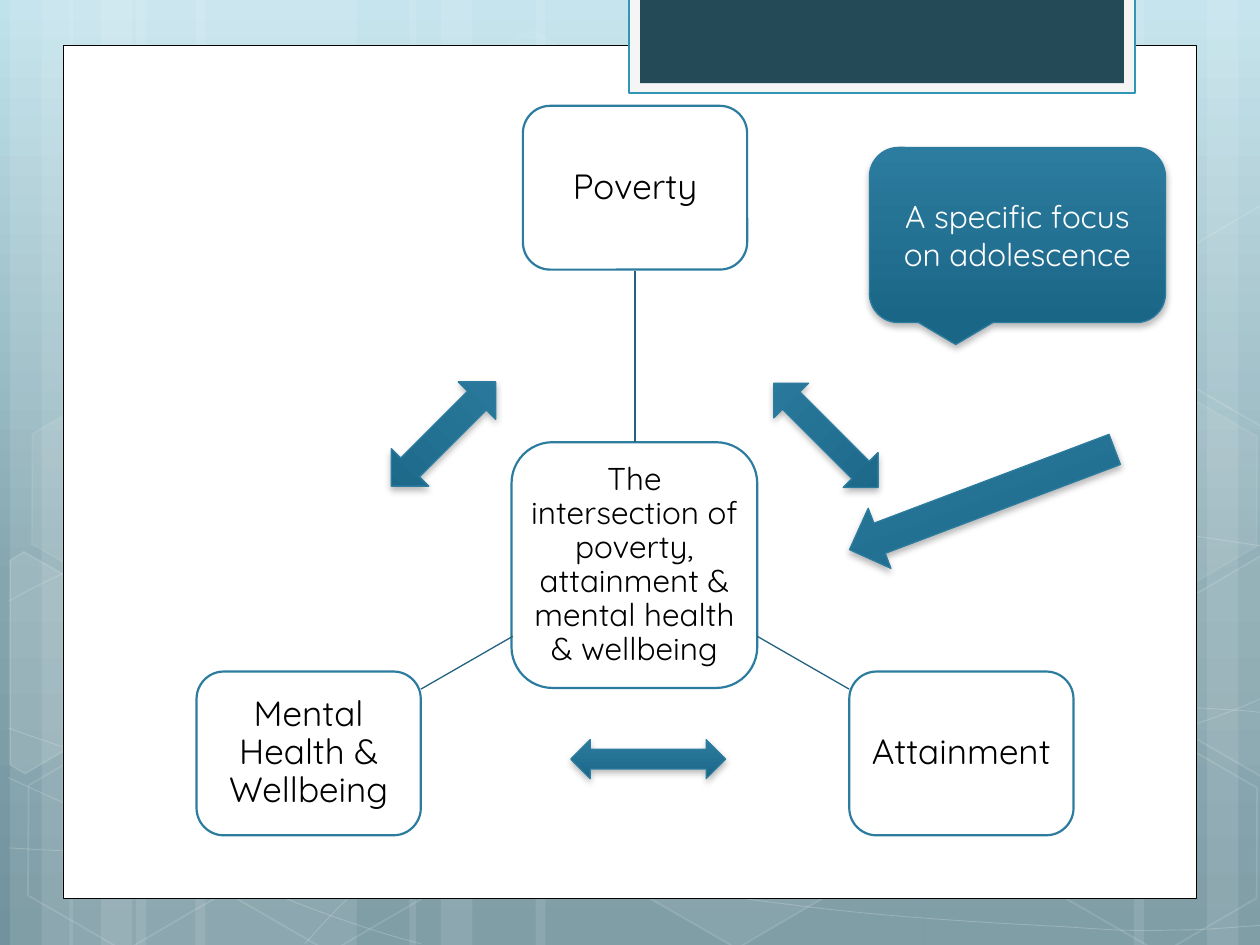
import pptx
import pptx.dml.color
import pptx.enum.shapes
import pptx.enum.text
import pptx.oxml.ns
import pptx.util
from lxml import etree

Inches = pptx.util.Inches
Pt = pptx.util.Pt
Kind = pptx.enum.shapes.MSO_SHAPE
qn = pptx.oxml.ns.qn

FONT = "Quicksand"
BLUE = "2C7C9F"
SPOKE = "23637F"
WHITE = "FFFFFF"
BLACK = "000000"

# left, width of the pale vertical bars
BARS = [(1.08, 1.75), (0.08, 0.5), (0.33, 0.83), (1.55, 1.75), (0.55, 0.5), (0.8, 0.83),
        (7.33, 1.75), (9.58, 0.5), (9, 0.83), (4.25, 3.08), (3.25, 0.5), (3.5, 0.83)]

# Each wave is a start point followed by cubic segments: two controls and an end
WAVES = [
    [(0.07, 6.73), (0.61, 6.76), (1.15, 6.79), (1.9, 6.78), (2.65, 6.77), (3.58, 6.75),
     (4.58, 6.65), (5.58, 6.55), (7, 6.36), (7.92, 6.17), (8.83, 5.98), (9.77, 5.68),
     (10.07, 5.51)],
    [(0.07, 4.77), (0.36, 4.61), (0.65, 4.46), (1.21, 4.31), (1.78, 4.16), (2.59, 3.94),
     (3.47, 3.87), (4.36, 3.8), (5.44, 3.79), (6.54, 3.87), (7.64, 3.95), (9.47, 4.26),
     (10.07, 4.34)],
    [(0.06, 6.17), (1.27, 6.72), (2.47, 7.27), (3.34, 7.49)],
    [(0.07, 5.78), (0.38, 5.89), (0.7, 6), (1.28, 6.16), (1.86, 6.31), (2.73, 6.56),
     (3.57, 6.73), (4.4, 6.9), (5.45, 7.08), (6.28, 7.18), (7.11, 7.29), (8, 7.33),
     (8.53, 7.36), (9.05, 7.4), (9.19, 7.38), (9.45, 7.38), (9.71, 7.37), (9.89, 7.35),
     (10.07, 7.34)],
    [(2.42, 7.49), (2.6, 7.29), (2.78, 7.09), (3.02, 6.91), (3.26, 6.73), (3.6, 6.53),
     (3.88, 6.39), (4.16, 6.25), (4.33, 6.19), (4.7, 6.09), (5.06, 5.99), (5.73, 5.85),
     (6.08, 5.78), (6.44, 5.71), (6.49, 5.71), (6.8, 5.69), (7.11, 5.66), (7.6, 5.63),
     (7.94, 5.62), (8.29, 5.61), (8.86, 5.62), (8.86, 5.62), (9.08, 5.62), (9.31, 5.62),
     (9.53, 5.62), (9.71, 5.63), (9.88, 5.64), (9.97, 5.65), (10.06, 5.66), (10.03, 5.65),
     (10.06, 5.66)],
]

# left, top, fill opacity, line opacity
HEXAGONS = [(3.34, 0.36, 4, 8), (4.97, 5.89, 6, 12), (0.11, 5.91, 0, 12), (0.14, 3.12, 7, 8),
            (1.74, 5.92, 0, 12), (7.53, 4.53, 10, 12), (8.34, 5.93, 0, 12), (8.34, 3.14, 7, 8)]

# fill opacity, corners of the hexagons cut by the slide's edge
CUT_HEXAGONS = [
    (10, [(0.08, 4.45), (0.19, 4.38), (0.96, 4.82), (0.95, 5.7), (0.2, 6.14), (0.08, 6.07)]),
    (4, [(9.26, 4.85), (10.01, 4.41), (10.09, 4.46), (10.09, 6.13), (10.02, 6.17), (9.26, 5.73)]),
    (0, [(9.26, 2.07), (10.01, 1.63), (10.1, 1.68), (10.09, 3.35), (10.02, 3.39), (9.26, 2.95)]),
]


def rgb(value):
    return pptx.dml.color.RGBColor.from_string(value)


def paint(fill, holder, color, opacity=100):
    """Fill solidly; holder is the XML element that contains the fill."""
    if not color or not opacity:
        fill.background()
        return
    fill.solid()
    fill.fore_color.rgb = rgb(color)
    if opacity < 100:
        tint = holder.find(qn("a:solidFill")).find(qn("a:srgbClr"))
        etree.SubElement(tint, qn("a:alpha"), val=str(opacity * 1000))


def paint_gradient(fill, root, stops):
    """Fill from top to bottom with (percent, color) stops."""
    fill.gradient()
    fill.gradient_angle = 270
    stop_list = next(root.iter(qn("a:gsLst")))
    for stop in list(stop_list):
        stop_list.remove(stop)
    for percent, color in stops:
        stop = etree.SubElement(stop_list, qn("a:gs"), pos=str(percent * 1000))
        etree.SubElement(stop, qn("a:srgbClr"), val=color)


def outline(shape, color, width, opacity=100):
    shape.line.width = Pt(width)
    paint(shape.line.fill, shape.element.spPr.find(qn("a:ln")), color, opacity)


def add_shape(page, kind, left, top, width, height, color=None, opacity=100, rotation=0):
    shape = page.shapes.add_shape(kind, Inches(left), Inches(top), Inches(width), Inches(height))
    shape.shadow.inherit = False
    shape.rotation = rotation
    paint(shape.fill, shape.element.spPr, color, opacity)
    shape.line.fill.background()
    return shape


def add_outline(page, points, close, opacity=0):
    corners = [(Inches(x), Inches(y)) for x, y in points]
    builder = page.shapes.build_freeform(*corners[0])
    builder.add_line_segments(corners[1:], close=close)
    shape = builder.convert_to_shape()
    shape.shadow.inherit = False
    paint(shape.fill, shape.element.spPr, WHITE, opacity)
    return shape


def add_wave(page, points):
    """Draw an open outline, each three of its segments joined into one cubic curve."""
    wave = add_outline(page, points, False)
    segments = list(wave.element.iter(qn("a:lnTo")))
    track = segments[0].getparent()
    for first in range(0, len(segments), 3):
        curve = etree.SubElement(track, qn("a:cubicBezTo"))
        for segment in segments[first:first + 3]:
            curve.append(segment[0])
            track.remove(segment)
    outline(wave, WHITE, 0.5, 20)


def write_text(shape, text, size, color):
    frame = shape.text_frame
    frame.word_wrap = True
    frame.vertical_anchor = pptx.enum.text.MSO_ANCHOR.MIDDLE
    para = frame.paragraphs[0]
    para.text = text
    para.alignment = pptx.enum.text.PP_ALIGN.CENTER
    para.font.size = Pt(size)
    para.font.name = FONT
    para.font.color.rgb = rgb(color)
    return frame


def add_node(page, left, top, width, height, text, size, inset):
    node = add_shape(page, Kind.ROUNDED_RECTANGLE, left, top, width, height, WHITE)
    outline(node, BLUE, 1.25)
    frame = write_text(node, text, size, BLACK)
    frame.paragraphs[0].line_spacing = 0.9
    frame.margin_left = frame.margin_right = Inches(inset)
    frame.margin_top = frame.margin_bottom = Inches(inset)


def add_spoke(page, start, end):
    spoke = page.shapes.add_connector(pptx.enum.shapes.MSO_CONNECTOR.STRAIGHT,
                                      *map(Inches, start + end))
    spoke.line.color.rgb = rgb(SPOKE)
    spoke.line.width = Pt(0.75)
    etree.SubElement(spoke.element.spPr, qn("a:effectLst"))


def add_glossy(page, kind, left, top, width, height, rotation=0):
    """Add a blue gradient shape with a soft shadow below it."""
    shape = add_shape(page, kind, left, top, width, height, rotation=rotation)
    paint_gradient(shape.fill, shape.element, [(0, BLUE), (100, "1A6687")])
    outline(shape, BLUE, 0.75)
    shadow = etree.SubElement(shape.element.spPr.find(qn("a:effectLst")), qn("a:outerShdw"),
                              blurRad=str(Pt(4)), dist=str(Pt(2)), dir="5400000", rotWithShape="0")
    tint = etree.SubElement(shadow, qn("a:srgbClr"), val=BLACK)
    etree.SubElement(tint, qn("a:alpha"), val="28000")
    return shape


def add_backdrop(page):
    paint_gradient(page.background.fill, page.element,
                   [(0, "C0E2EB"), (62, "85A6AF"), (100, "72939D")])
    for left, width in BARS:
        add_shape(page, Kind.RECTANGLE, left, 0, width, 7.5, WHITE, 10)
    for points in WAVES:
        add_wave(page, points)
    for left, top, opacity, line_opacity in HEXAGONS:
        hexagon = add_shape(page, Kind.HEXAGON, left, top, 1.75, 1.52, WHITE, opacity, 30)
        hexagon.adjustments[0] = 0.285
        outline(hexagon, WHITE, 1, line_opacity)
    for opacity, corners in CUT_HEXAGONS:
        outline(add_outline(page, corners, True, opacity), WHITE, 1, 12)


def add_panel(page):
    outline(add_shape(page, Kind.RECTANGLE, 0.5, 0.36, 9, 6.77, WHITE), BLACK, 0.5)
    outline(add_shape(page, Kind.RECTANGLE, 4.99, -0.02, 4.02, 0.76, "F5F5F5"), "2F97B5", 1.25)
    add_shape(page, Kind.RECTANGLE, 5.08, -0.02, 3.84, 0.68, "244A58")


def add_diagram(page):
    add_node(page, 4.06, 3.51, 1.95, 1.95,
             "The intersection of poverty, attainment & mental health & wellbeing", 18, 0.05)
    for left, top, text, start, end in [
            (4.15, 0.84, "Poverty", (5.04, 3.51), (5.04, 2.15)),
            (6.74, 5.33, "Attainment", (6.01, 5.05), (6.74, 5.47)),
            (1.56, 5.33, "Mental Health & Wellbeing", (4.07, 5.05), (3.34, 5.47))]:
        add_spoke(page, start, end)
        add_node(page, left, top, 1.78, 1.3, text, 20, 0.06)
    add_glossy(page, Kind.UP_DOWN_ARROW, 6.36, 2.87, 0.39, 1.17, 315)
    add_glossy(page, Kind.UP_DOWN_ARROW, 3.31, 2.86, 0.42, 1.17, 45)
    add_glossy(page, Kind.LEFT_RIGHT_ARROW, 4.53, 5.87, 1.23, 0.31)
    add_glossy(page, Kind.LEFT_ARROW, 6.67, 3.71, 2.25, 0.51, 339.3)
    callout = add_glossy(page, Kind.ROUNDED_RECTANGULAR_CALLOUT, 6.9, 1.17, 2.35, 1.39)
    write_text(callout, "A specific focus on adolescence", 18, WHITE)


def main():
    deck = pptx.Presentation()
    deck.slide_width, deck.slide_height = Inches(10), Inches(7.5)
    page = deck.slides.add_slide(deck.slide_layouts[6])
    add_backdrop(page)
    add_panel(page)
    add_diagram(page)
    deck.save("out.pptx")


if __name__ == "__main__":
    main()
